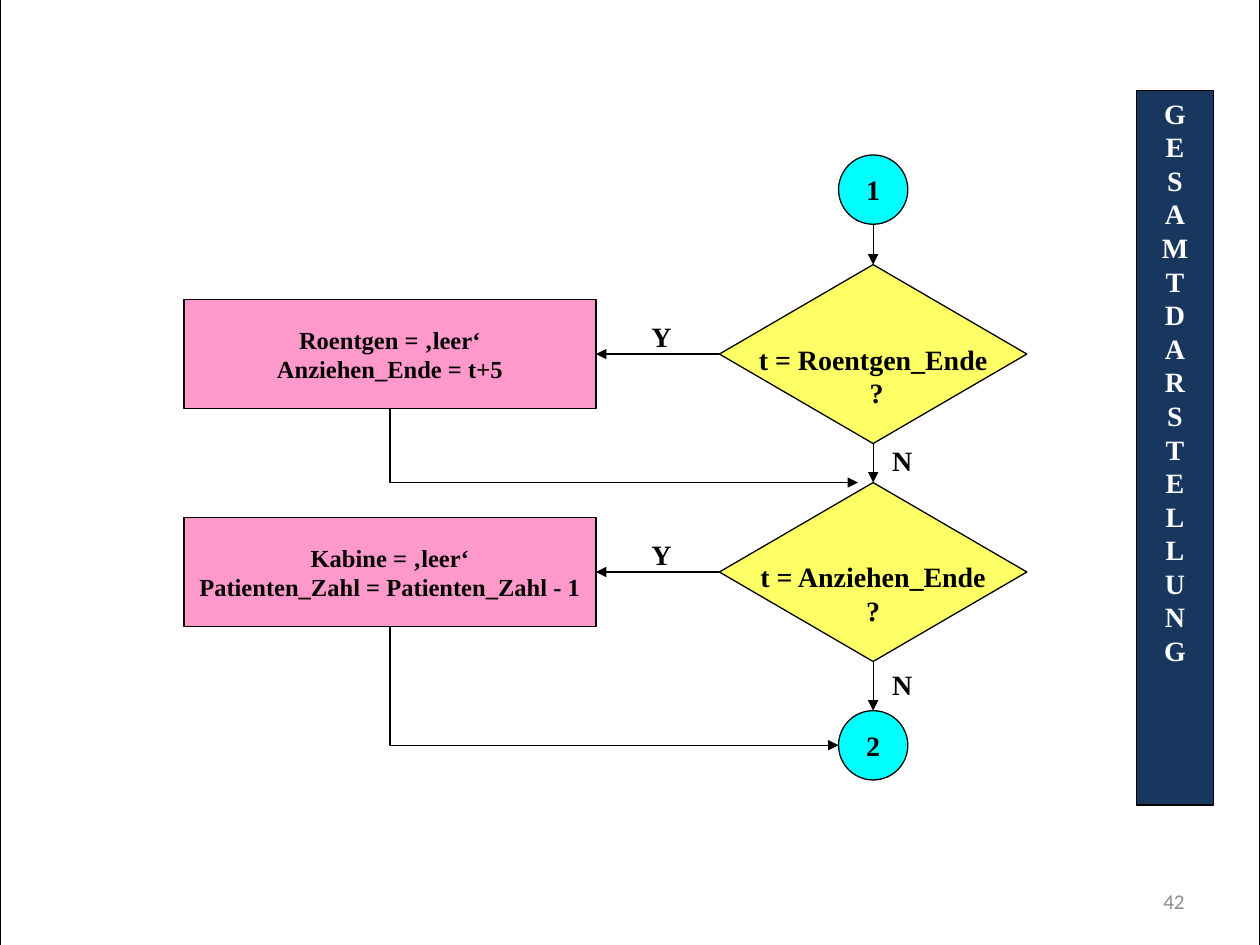
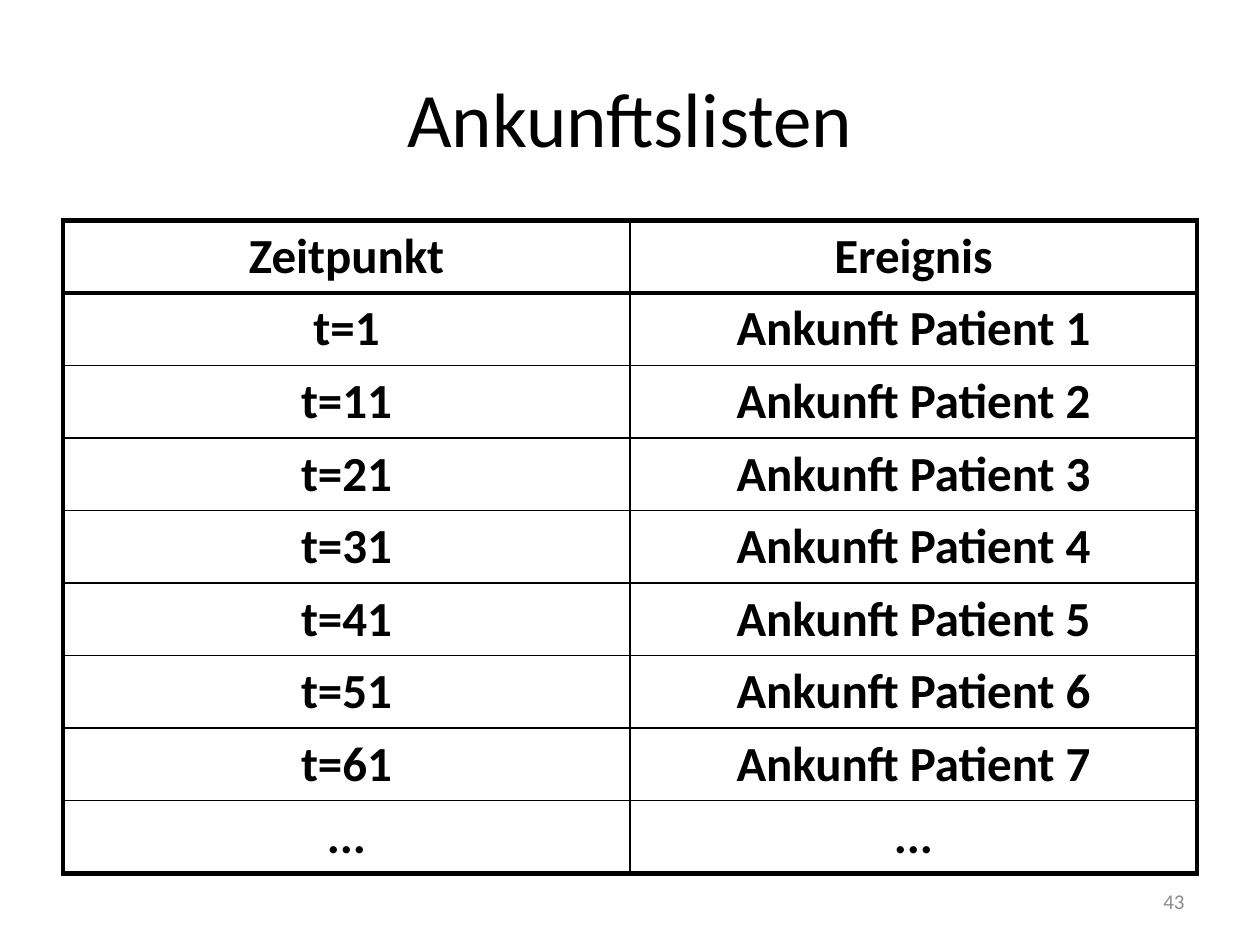
"""Build a flow chart slide and an arrival list slide."""
from lxml.etree import SubElement
from pptx import Presentation
from pptx.dml.color import RGBColor
from pptx.enum.shapes import MSO_CONNECTOR, MSO_SHAPE
from pptx.enum.text import MSO_ANCHOR, PP_ALIGN
from pptx.oxml import parse_xml
from pptx.oxml.ns import nsdecls, qn
from pptx.util import Inches, Pt

BLACK, WHITE, GREY = "000000", "FFFFFF", "8C8C8C"
NAVY, PINK, YELLOW, CYAN = "17375E", "FF99CC", "FFFF66", "00FFFF"
SERIF, SANS = "Times New Roman", "Calibri"
AXIS, PITCH = 6.93, 1.73
BOX_LEFT, BOX_WIDE, BOX_HIGH = 1.46, 3.27, 0.87
ASK_WIDE, ASK_HIGH = 2.44, 1.42
DOT = 0.55


def color(code):
    return RGBColor.from_string(code)


def write(frame, text, size=16, font=SERIF, ink=BLACK, bold=True,
          align=PP_ALIGN.CENTER, anchor=MSO_ANCHOR.TOP, wrap=True):
    frame.word_wrap = wrap
    frame.vertical_anchor = anchor
    for index, line in enumerate(text.split("\n")):
        para = frame.add_paragraph() if index else frame.paragraphs[0]
        para.alignment = align
        run = para.add_run()
        run.text = line
        run.font.size, run.font.name, run.font.bold = Pt(size), font, bold
        run.font.color.rgb = color(ink)


def label(slide, text, left, top, width=0.5, height=0.39, **style):
    box = slide.shapes.add_textbox(
        Inches(left), Inches(top), Inches(width), Inches(height))
    write(box.text_frame, text, **style)


def shape(slide, kind, left, top, width, height, fill=None, text="", **style):
    item = slide.shapes.add_shape(
        kind, Inches(left), Inches(top), Inches(width), Inches(height))
    item.shadow.inherit = False
    if fill:
        item.fill.solid()
        item.fill.fore_color.rgb = color(fill)
    else:
        item.fill.background()
    item.line.color.rgb = color(BLACK)
    item.line.width = Pt(0.75)
    if text:
        write(item.text_frame, text, **style)
    return item


def arrow(slide, start, end, kind=MSO_CONNECTOR.STRAIGHT):
    link = slide.shapes.add_connector(kind, *map(Inches, start + end))
    link.line.color.rgb = color(BLACK)
    link.line.width = Pt(0.75)
    SubElement(link.line._get_or_add_ln(), qn("a:tailEnd"), type="triangle")
    SubElement(link._element.spPr, qn("a:effectLst"))
    return link


def elbow(slide, start, end):
    """Draw an arrow that goes down first, then right."""
    (left, top), (right, low) = start, end
    mid_x, mid_y = (left + right) / 2, (top + low) / 2
    half_w, half_h = (low - top) / 2, (right - left) / 2
    link = arrow(slide, (mid_x - half_w, mid_y - half_h),
                 (mid_x + half_w, mid_y + half_h), MSO_CONNECTOR.ELBOW)
    props = link._element.spPr
    props.find(qn("a:prstGeom")).set("prst", "bentConnector2")
    frame = props.find(qn("a:xfrm"))
    frame.set("rot", str(270 * 60000))
    frame.set("flipH", "1")


def circle(slide, text, top):
    shape(slide, MSO_SHAPE.OVAL, AXIS - DOT / 2, top, DOT, DOT, CYAN, text,
          anchor=MSO_ANCHOR.MIDDLE, wrap=False)


def branch(slide, top, query, action, down, label_top):
    """Draw a question, its action on Yes and its way down on No."""
    left, mid, low = AXIS - ASK_WIDE / 2, top + ASK_HIGH / 2, top + ASK_HIGH
    ask = shape(slide, MSO_SHAPE.FLOWCHART_DECISION, left, top,
                ASK_WIDE, ASK_HIGH, YELLOW, query, wrap=False)
    frame = ask.text_frame
    frame.margin_left = frame.margin_right = frame.margin_bottom = 0
    frame.margin_top = Inches(0.26)
    shape(slide, MSO_SHAPE.RECTANGLE, BOX_LEFT, mid - BOX_HIGH / 2,
          BOX_WIDE, BOX_HIGH, PINK, action, size=14,
          anchor=MSO_ANCHOR.MIDDLE)
    arrow(slide, (left, mid), (BOX_LEFT + BOX_WIDE, mid))
    label(slide, "Y", 5, mid - 0.32)
    arrow(slide, (AXIS, low), (AXIS, down))
    label(slide, "N", 6.91, label_top)
    return BOX_LEFT + BOX_WIDE / 2, mid + BOX_HIGH / 2


def number(slide, value):
    label(slide, str(value), 7.17, 6.95, 2.33, 0.4, size=12, font=SANS,
          ink=GREY, bold=False, align=PP_ALIGN.RIGHT,
          anchor=MSO_ANCHOR.MIDDLE)


def border(cell, left, right, top, bottom):
    props = cell._tc.get_or_add_tcPr()
    sides = zip("LRTB", (left, right, top, bottom))
    for index, (side, width) in enumerate(sides):
        props.insert(index, parse_xml(
            f'<a:ln{side} {nsdecls("a")} w="{Pt(width)}"><a:solidFill>'
            f'<a:srgbClr val="{BLACK}"/></a:solidFill></a:ln{side}>'))


def grid(slide, rows):
    count = len(rows)
    table = slide.shapes.add_table(
        count, 2, Inches(0.5), Inches(1.75), Inches(9), Inches(5.1)).table
    table.first_row = table.horz_banding = False
    for row, texts in enumerate(rows):
        top = {0: 3, 1: 2}.get(row, 1)
        bottom = {0: 2, count - 1: 3}.get(row, 1)
        for col, text in enumerate(texts):
            cell = table.cell(row, col)
            cell.fill.background()
            write(cell.text_frame, text, size=28, font=SANS)
            border(cell, 1 if col else 3, 3 if col else 1, top, bottom)


def flow_slide(deck):
    slide = deck.slides.add_slide(deck.slide_layouts[6])
    shape(slide, MSO_SHAPE.RECTANGLE, 0, -0.01, 10, 7.52)
    first, dot_top, end_top = 2.1, 1.23, 5.64
    second = first + PITCH
    circle(slide, "1", dot_top)
    arrow(slide, (AXIS, dot_top + DOT), (AXIS, first))
    exit_one = branch(slide, first, "t = Roentgen_Ende\n ?",
                      "Roentgen = ‚leer‘\nAnziehen_Ende = t+5", second, 3.47)
    exit_two = branch(slide, second, "t = Anziehen_Ende\n?",
                      "Kabine = ‚leer‘\nPatienten_Zahl = Patienten_Zahl - 1",
                      end_top, 5.25)
    circle(slide, "2", end_top)
    elbow(slide, exit_one, (6.81, second))
    elbow(slide, exit_two, (AXIS - DOT / 2, end_top + DOT / 2))
    band = shape(slide, MSO_SHAPE.RECTANGLE, 9.02, 0.72, 0.61, 5.67, NAVY,
                 "GESAMTDARSTELLUNG", ink=WHITE)
    band.text_frame.margin_bottom = Inches(1.1)
    band.text_frame._txBody.bodyPr.set("vert", "wordArtVert")
    number(slide, 42)


def list_slide(deck):
    slide = deck.slides.add_slide(deck.slide_layouts[5])
    title = slide.shapes.title
    title.left, title.top = Inches(0.5), Inches(0.3)
    title.width, title.height = Inches(9), Inches(1.25)
    write(title.text_frame, "Ankunftslisten", size=44, font=SANS, bold=False,
          anchor=MSO_ANCHOR.MIDDLE)
    visits = [(f"t={10 * n + 1}", f"Ankunft Patient {n + 1}")
              for n in range(7)]
    grid(slide, [("Zeitpunkt", "Ereignis"), *visits, ("...", "...")])
    number(slide, 43)


def main():
    deck = Presentation()
    deck.slide_width, deck.slide_height = Inches(10), Inches(7.5)
    flow_slide(deck)
    list_slide(deck)
    deck.save("out.pptx")


if __name__ == "__main__":
    main()
